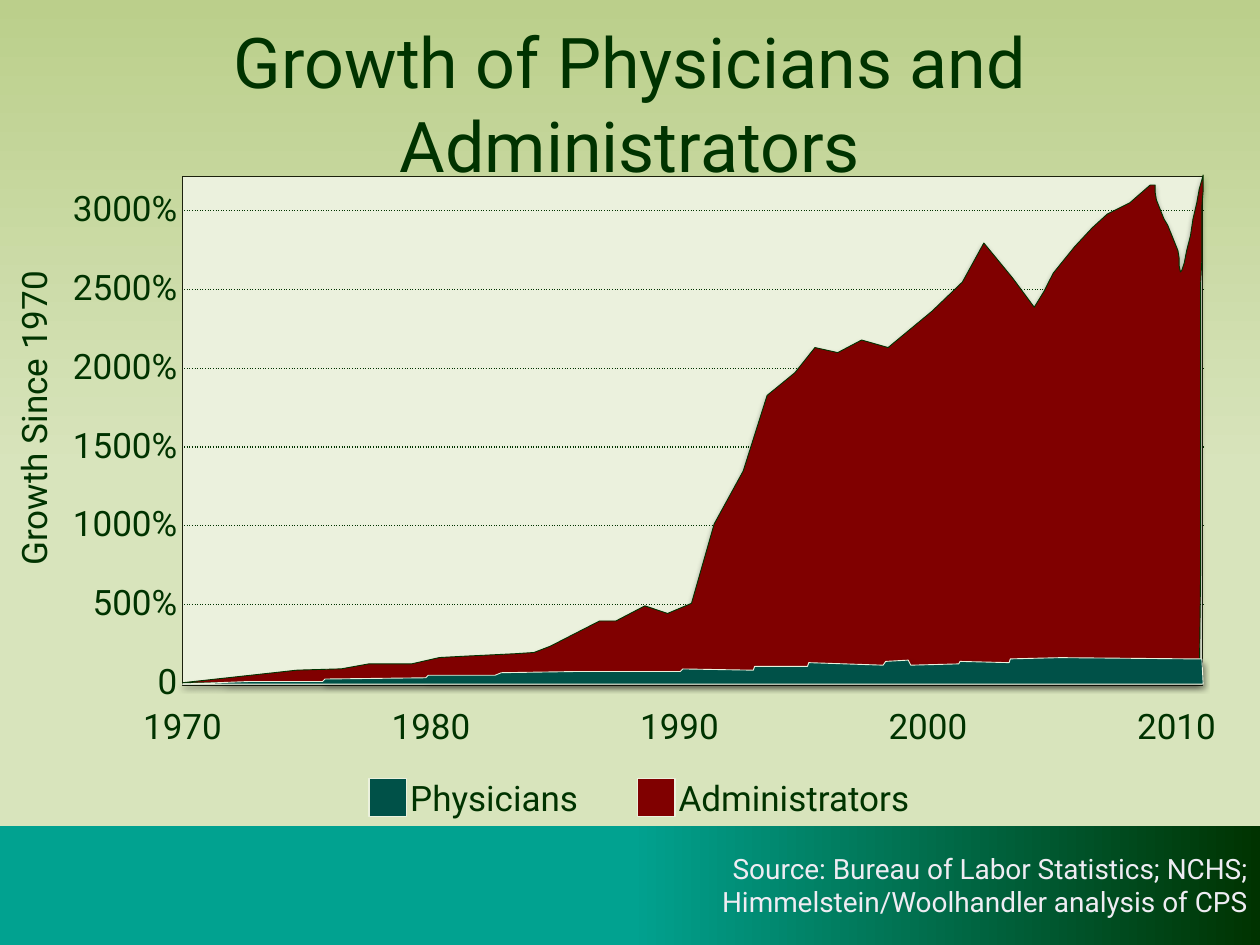
from copy import deepcopy
from dataclasses import dataclass

from lxml.etree import SubElement
from pptx import Presentation
from pptx.dml.color import RGBColor
from pptx.enum.shapes import MSO_SHAPE as Preset
from pptx.enum.text import MSO_ANCHOR as Anchor, MSO_AUTO_SIZE as AutoSize, PP_ALIGN as Align
from pptx.oxml import parse_xml
from pptx.oxml.ns import nsdecls, qn
from pptx.util import Cm, Pt


@dataclass(frozen=True)
class Theme:
    font: str = "Roboto"
    ink: str = "003300"
    pale: str = "EBF1DD"
    frame: str = "1B210D"
    physicians: str = "005148"
    administrators: str = "800000"
    source: str = "EFECF3"
    backdrop: tuple = ((0, "BBCF8B"), (0.5, "D8E4BC"), (1, "D8E4BC"))
    band: tuple = ((0.27, "01A290"), (0.5, "01A290"), (1, "003300"))
    title_size: int = 40
    label_size: int = 20
    source_size: int = 16


@dataclass(frozen=True)
class Box:
    left: float
    top: float
    width: float
    height: float

    def lengths(self):
        """Return the four measures as lengths."""
        return [Cm(n) for n in (self.left, self.top, self.width, self.height)]


THEME = Theme()
ROW_STEP = 1.59
DECADE = 5.01
PLOT_UNIT = Cm(2.54) / 100
NO_TABLE_STYLE = "{2D5ABB26-0587-4C30-8999-92F81FD0307C}"
PERCENTS = ["3000%", "2500%", "2000%", "1500%", "1000%", "500%", "0"]
YEARS = ["1970", "1980", "1990", "2000", "2010"]
SERIES = [("Physicians", THEME.physicians), ("Administrators", THEME.administrators)]

ADMIN_RISE = [
    (0, 1), (91, 11), (126, 12), (148, 16), (182, 16), (204, 21), (223, 22), (264, 24),
    (279, 25), (292, 30), (331, 50), (344, 50), (367, 62), (385, 56), (404, 64), (422, 127),
    (445, 169), (464, 229), (486, 247), (502, 267), (520, 263), (539, 273), (560, 267),
    (595, 296), (619, 319), (636, 350), (659, 322), (676, 299), (684, 312), (691, 326),
    (708, 347), (722, 362), (734, 373), (752, 382), (760, 389), (768, 396), (772, 396),
]
ADMIN_CURVES = [
    [(772, 396), (772, 370), (791, 358), (791, 332)],
    [(791, 332), (793, 296), (813, 447), (810, 391)],
    [(810, 391), (807, 336), (810, 379), (807, 1)],
]
PHYSICIAN_AREA = [
    (-1, 0), (810, 0), (809, 20), (800, 20), (697, 21), (657, 20), (656, 17), (617, 18),
    (616, 16), (578, 15), (576, 19), (558, 18), (556, 15), (497, 17), (496, 14), (454, 14),
    (453, 11), (397, 12), (395, 10), (314, 10), (253, 9), (248, 7), (195, 7), (193, 5),
    (113, 4), (111, 2), (52, 2),
]


def assign(target, values):
    """Set each named attribute on the target."""
    for name, value in values.items():
        setattr(target, name, value)


def paint_gradient(fill, owner, stops, angle):
    """Fill with a linear gradient of any number of stops."""
    fill.gradient()
    fill.gradient_angle = angle
    stop_list = next(owner.iter(qn("a:gsLst")))
    while len(stop_list) < len(stops):
        stop_list.append(deepcopy(stop_list[-1]))
    for stop, (position, color) in zip(fill.gradient_stops, stops):
        stop.position = position
        stop.color.rgb = RGBColor.from_string(color)


def paint(shape, fill, line, weight):
    """Give a shape a plain fill and outline without a shadow."""
    shape.shadow.inherit = False
    shape.fill.solid()
    shape.fill.fore_color.rgb = RGBColor.from_string(fill)
    shape.line.color.rgb = RGBColor.from_string(line)
    shape.line.width = Pt(weight)


def write(frame, text, size=THEME.label_size, color=THEME.ink, align=Align.LEFT):
    """Write one formatted paragraph."""
    frame.text = text
    paragraph = frame.paragraphs[0]
    paragraph.alignment = align
    font = paragraph.runs[0].font
    assign(font, {"name": THEME.font, "size": Pt(size)})
    font.color.rgb = RGBColor.from_string(color)


def add_label(slide, box, text, anchor=Anchor.TOP, **style):
    """Add a wrapped text box."""
    label = slide.shapes.add_textbox(*box.lengths())
    assign(label.text_frame, {"word_wrap": True, "vertical_anchor": anchor})
    write(label.text_frame, text, **style)
    return label


def add_plain_table(slide, box, rows, columns):
    """Add an unstyled table and return it."""
    table = slide.shapes.add_table(rows, columns, *box.lengths()).table
    assign(table, {"first_row": False, "horz_banding": False})
    next(table._tbl.iter(qn("a:tableStyleId"))).text = NO_TABLE_STYLE
    for row in table.rows:
        row.height = Cm(box.height / rows)
    for cell in table.iter_cells():
        cell.fill.background()
    return table


def add_gridlines(slide, box, rows):
    """Draw dotted gridlines as the borders of a table."""
    for cell in add_plain_table(slide, box, rows, 1).iter_cells():
        for index, side in enumerate(("lnT", "lnB")):
            cell._tc.get_or_add_tcPr().insert(index, parse_xml(
                f'<a:{side} {nsdecls("a")} w="{Pt(0.75)}"><a:solidFill>'
                f'<a:srgbClr val="{THEME.ink}"/></a:solidFill>'
                f'<a:prstDash val="sysDot"/></a:{side}>'))


def add_scale(slide, box, labels, rows, columns, align):
    """Set axis labels in the cells of a table."""
    table = add_plain_table(slide, box, rows, columns)
    for cell, label in zip(table.iter_cells(), labels):
        write(cell.text_frame, label, align=align)


def bezier(start, first, second, end, steps=12):
    """Return points along a cubic curve after its start."""
    return [tuple((1 - t) ** 3 * a + 3 * t * (1 - t) ** 2 * b + 3 * t * t * (1 - t) * c + t ** 3 * d
                  for a, b, c, d in zip(start, first, second, end))
            for t in (step / steps for step in range(1, steps + 1))]


def add_area(slide, plot, points, fill, line):
    """Draw a filled area standing on the baseline of the plot."""
    start, *others = [(x, -height) for x, height in points]
    builder = slide.shapes.build_freeform(*start, scale=PLOT_UNIT)
    builder.add_line_segments(others, close=True)
    area = builder.convert_to_shape(Cm(plot.left), Cm(plot.top + plot.height - 0.03))
    paint(area, fill, line, 0.5)
    effects = area._element.spPr.find(qn("a:effectLst"))
    shadow = SubElement(effects, qn("a:outerShdw"), blurRad=str(Pt(3.1)), dist=str(Pt(2)),
                        dir="5400000", rotWithShape="0")
    black = SubElement(shadow, qn("a:srgbClr"), val="000000")
    SubElement(black, qn("a:alpha"), val="38000")


def add_growth_plot(slide, plot):
    """Draw the plot with its gridlines, scales and areas."""
    panel = slide.shapes.add_shape(Preset.RECTANGLE, *plot.lengths())
    paint(panel, THEME.pale, THEME.frame, 0.75)
    add_gridlines(slide, Box(plot.left + 0.03, plot.top + 0.68, plot.width - 0.03, 5 * ROW_STEP), 5)
    axis_title = add_label(slide, Box(plot.left - 6.5, plot.top + 4.31, 7, 1.12),
                           "Growth Since 1970", align=Align.CENTER)
    axis_title.rotation = 270
    add_scale(slide, Box(plot.left - 2.82, plot.top + 0.12, 2.97, len(PERCENTS) * ROW_STEP),
              PERCENTS, len(PERCENTS), 1, Align.RIGHT)
    add_scale(slide, Box(plot.left - DECADE / 2, plot.top + plot.height + 0.3,
                         len(YEARS) * DECADE, 1.04), YEARS, 1, len(YEARS), Align.CENTER)
    admin_area = ADMIN_RISE + [point for curve in ADMIN_CURVES for point in bezier(*curve)]
    add_area(slide, plot, admin_area, THEME.administrators, THEME.ink)
    add_area(slide, plot, PHYSICIAN_AREA, THEME.physicians, THEME.pale)


def add_legend(slide, box):
    """Place a swatch and a name for each series."""
    step = box.width / len(SERIES)
    for index, (series, color) in enumerate(SERIES):
        left = box.left + index * step
        swatch = slide.shapes.add_shape(
            Preset.RECTANGLE, *Box(left, box.top + 0.18, 0.76, 0.76).lengths())
        paint(swatch, color, THEME.pale, 0.75)
        add_label(slide, Box(left + 0.58, box.top, step, box.height), series)


def add_source_band(slide, box):
    """Draw the bottom band with the source line."""
    band = slide.shapes.add_shape(Preset.RECTANGLE, *box.lengths())
    band.shadow.inherit = False
    band.line.fill.background()
    paint_gradient(band.fill, band._element, THEME.band, 0)
    add_label(slide, Box(box.left + 9.4, box.top + 0.36, box.width - 9.4, 1.63),
              "Source: Bureau of Labor Statistics; NCHS; Himmelstein/Woolhandler analysis of CPS",
              Anchor.MIDDLE, size=THEME.source_size, color=THEME.source, align=Align.RIGHT)


def set_title(slide, box, text):
    """Move, format and fill the title placeholder."""
    title = slide.shapes.title
    assign(title, dict(zip(("left", "top", "width", "height"), box.lengths())))
    assign(title.text_frame, {"word_wrap": True, "auto_size": AutoSize.NONE,
                              "vertical_anchor": Anchor.MIDDLE})
    write(title.text_frame, text, THEME.title_size, align=Align.CENTER)


def main():
    """Build and save the slide."""
    deck = Presentation()
    assign(deck, {"slide_width": Cm(25.4), "slide_height": Cm(19.05)})
    slide = deck.slides.add_slide(deck.slide_layouts[5])
    paint_gradient(slide.background.fill, slide._element, THEME.backdrop, 270)
    set_title(slide, Box(0, 0.48, 25.4, 3.18), "Growth of Physicians and Administrators")
    add_source_band(slide, Box(0, 16.66, 25.4, 2.39))
    add_growth_plot(slide, Box(3.68, 3.56, 20.57, 10.26))
    add_legend(slide, Box(7.44, 15.52, 10.82, 1.12))
    deck.save("out.pptx")


if __name__ == "__main__":
    main()
